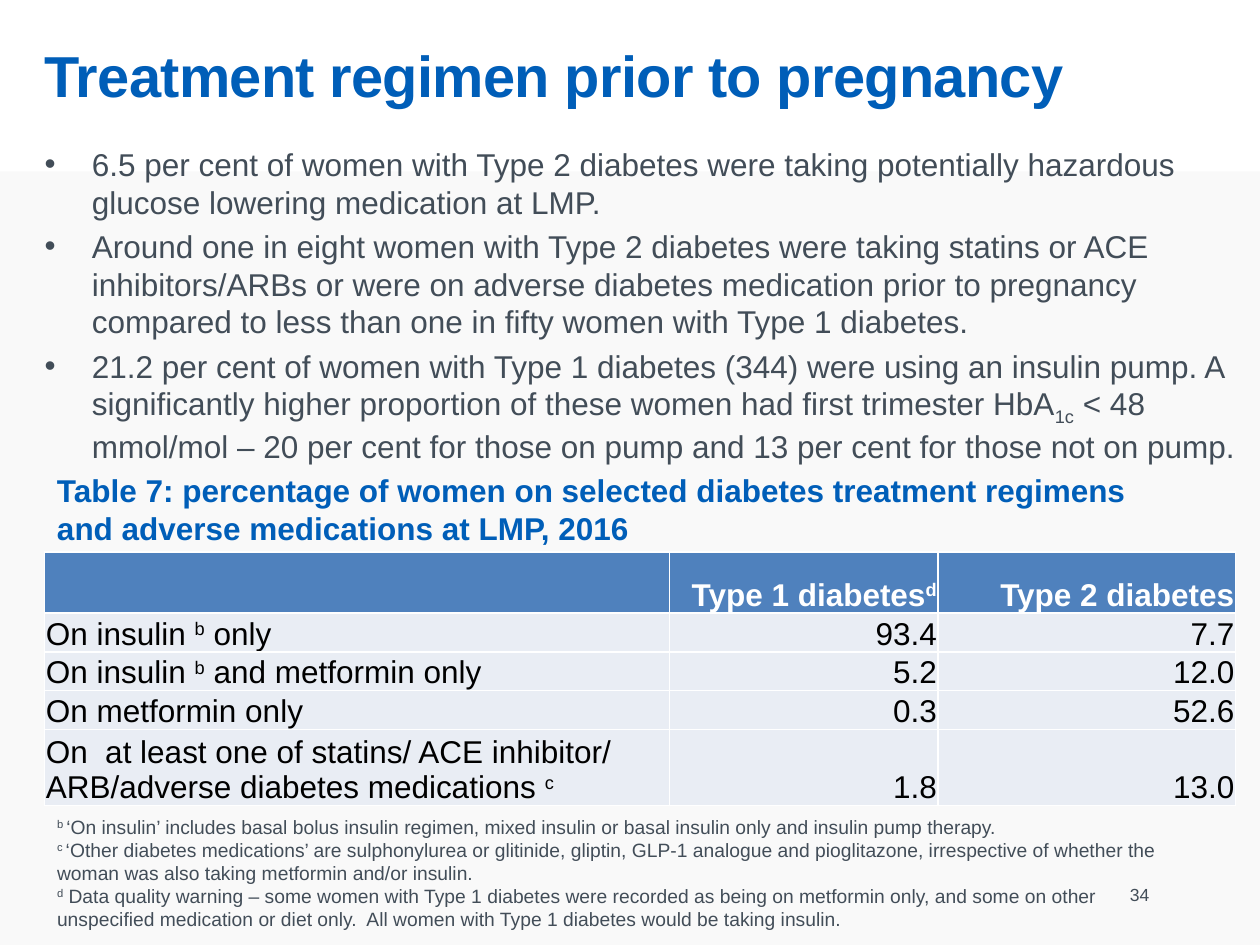
from lxml.etree import SubElement, Element
from pptx import Presentation
from pptx.dml.color import RGBColor
from pptx.enum.shapes import MSO_SHAPE
from pptx.enum.text import MSO_ANCHOR as Anchor, MSO_AUTO_SIZE as AutoSize, PP_ALIGN as Align
from pptx.oxml.ns import qn
from pptx.util import Pt

COLORS = {"blue": "005EB8", "text": "424D58", "panel": "F9F9F9", "header": "4F81BD",
          "row": "E9EDF4", "white": "FFFFFF", "black": "000000"}
SUPER, SUB = 30, -25

# A paragraph is a list of runs; a run is plain text or (text, baseline shift in percent).
TITLE = ["Treatment regimen prior to pregnancy"]
BULLETS = [
    ["6.5 per cent of women with Type 2 diabetes were taking potentially hazardous "
     "glucose lowering medication at LMP."],
    ["Around one in eight women with Type 2 diabetes were taking statins or ACE "
     "inhibitors/ARBs or were on adverse diabetes medication prior to pregnancy "
     "compared to less than one in fifty women with Type 1 diabetes."],
    ["21.2 per cent of women with Type 1 diabetes (344) were using an insulin pump. A "
     "significantly higher proportion of these women had first trimester HbA", ("1c", SUB),
     " < 48 mmol/mol – 20 per cent for those on pump and 13 per cent for those not on pump."],
]
CAPTION = ["Table 7: percentage of women on selected diabetes treatment regimens "
           "and adverse medications at LMP, 2016"]
FOOTNOTES = [
    [("b ", SUPER), "‘On insulin’ includes basal bolus insulin regimen, mixed insulin or "
     "basal insulin only and insulin pump therapy."],
    [("c ", SUPER), "‘Other diabetes medications’ are sulphonylurea or glitinide, gliptin, "
     "GLP-1 analogue and pioglitazone, irrespective of whether the woman was also taking "
     "metformin and/or insulin."],
    [("d", SUPER), " Data quality warning – some women with Type 1 diabetes were recorded as "
     "being on metformin only, and some on other unspecified medication or diet only.  "
     "All women with Type 1 diabetes would be taking insulin."],
]
TABLE = [
    [[], ["Type 1 diabetes", ("d", SUPER)], ["Type 2 diabetes"]],
    [["On insulin ", ("b", SUPER), " only"], ["93.4"], ["7.7"]],
    [["On insulin ", ("b", SUPER), " and metformin only"], ["5.2"], ["12.0"]],
    [["On metformin only"], ["0.3"], ["52.6"]],
    [["On  at least one of statins/ ACE inhibitor/ ARB/adverse diabetes medications ",
      ("c", SUPER)], ["1.8"], ["13.0"]],
]
COLUMN_WIDTHS = [357, 153.5, 170]
ROW_HEIGHTS = [34.8, 22.2, 22.2, 22.2, 43.5]
LEFT = 25.5


def rgb(name):
    """Return the named colour."""
    return RGBColor.from_string(COLORS[name])


def add_runs(paragraph, runs, size, color, bold=False):
    """Fill a paragraph run by run and return its runs."""
    for item in runs:
        text, baseline = (item, 0) if isinstance(item, str) else item
        run = paragraph.add_run()
        run.text = text
        run.font.name, run.font.size, run.font.bold = "Arial", Pt(size), bold
        run.font.color.rgb = rgb(color)
        if baseline:
            run.font._element.set("baseline", str(baseline * 1000))
    return paragraph.runs


def fill_text(shape, box, paragraphs, size, color, bold=False, inset=None,
              anchor=Anchor.TOP, align=Align.LEFT):
    """Place a text shape and write its paragraphs."""
    shape.left, shape.top, shape.width, shape.height = map(Pt, box)
    frame = shape.text_frame
    frame.word_wrap, frame.auto_size, frame.vertical_anchor = True, AutoSize.NONE, anchor
    if inset is not None:
        frame.margin_left = frame.margin_right = Pt(inset)
        frame.margin_top = frame.margin_bottom = Pt(inset)
    for index, runs in enumerate(paragraphs):
        paragraph = frame.add_paragraph() if index else frame.paragraphs[0]
        paragraph.alignment, paragraph.line_spacing = align, 1.0
        add_runs(paragraph, runs, size, color, bold)


def add_text(slide, box, paragraphs, size, color, **options):
    """Add a text box."""
    shape = slide.shapes.add_textbox(*map(Pt, box))
    fill_text(shape, box, paragraphs, size, color, **options)


def set_borders(cell, widths):
    """Draw white borders; widths maps the sides L, R, T and B to points."""
    properties = cell._tc.get_or_add_tcPr()
    for index, (side, width) in enumerate(widths.items()):
        line = Element(qn("a:ln" + side), w=str(Pt(width)))
        fill = SubElement(line, qn("a:solidFill"))
        SubElement(fill, qn("a:srgbClr"), val=COLORS["white"])
        properties.insert(index, line)


def add_regimen_table(slide):
    """Add the table of treatment regimens."""
    table = slide.shapes.add_table(
        len(TABLE), len(COLUMN_WIDTHS), Pt(LEFT), Pt(315.5),
        Pt(sum(COLUMN_WIDTHS)), Pt(sum(ROW_HEIGHTS))).table
    for column, width in zip(table.columns, COLUMN_WIDTHS):
        column.width = Pt(width)
    for r, (row, height) in enumerate(zip(TABLE, ROW_HEIGHTS)):
        table.rows[r].height = Pt(height)
        header = r == 0
        for c, runs in enumerate(row):
            cell = table.cell(r, c)
            cell.margin_left = cell.margin_right = cell.margin_top = Pt(0.7)
            cell.margin_bottom = 0
            cell.vertical_anchor = Anchor.BOTTOM
            cell.fill.solid()
            cell.fill.fore_color.rgb = rgb("header" if header else "row")
            set_borders(cell, {"L": 1, "R": 1, "T": 1.5 if r == 1 else 1,
                               "B": 1.5 if header else 1})
            paragraph = cell.text_frame.paragraphs[0]
            paragraph.alignment = Align.RIGHT if c else Align.LEFT
            add_runs(paragraph, runs, 18, "white" if header else "black", header)


presentation = Presentation()
presentation.slide_width, presentation.slide_height = Pt(720), Pt(540)
slide = presentation.slides.add_slide(presentation.slide_layouts[1])

panel = slide.shapes.add_shape(MSO_SHAPE.RECTANGLE, 0, Pt(98), Pt(720), Pt(442))
panel.shadow.inherit = False
panel.fill.solid()
panel.fill.fore_color.rgb = rgb("panel")
panel.line.fill.background()
panel._element.getparent().insert(2, panel._element)

title, body = slide.placeholders
fill_text(title, (LEFT, 23, 705.6, 45.4), [TITLE], 33, "blue", bold=True, inset=0)
for run in title.text_frame.paragraphs[0].runs:
    run.font._element.set("spc", "-40")
fill_text(body, (LEFT, 82.8, 686.2, 175.7), BULLETS, 18, "text", inset=0)

add_text(slide, (496, 496.8, 167.8, 28.8), [["34"]], 10, "text",
         anchor=Anchor.MIDDLE, align=Align.RIGHT)
add_text(slide, (LEFT, 265.7, 657.4, 51), [CAPTION], 18, "blue", bold=True)
add_text(slide, (LEFT, 462.2, 646.6, 74.2), FOOTNOTES, 11, "text")
add_regimen_table(slide)

presentation.save("out.pptx")
